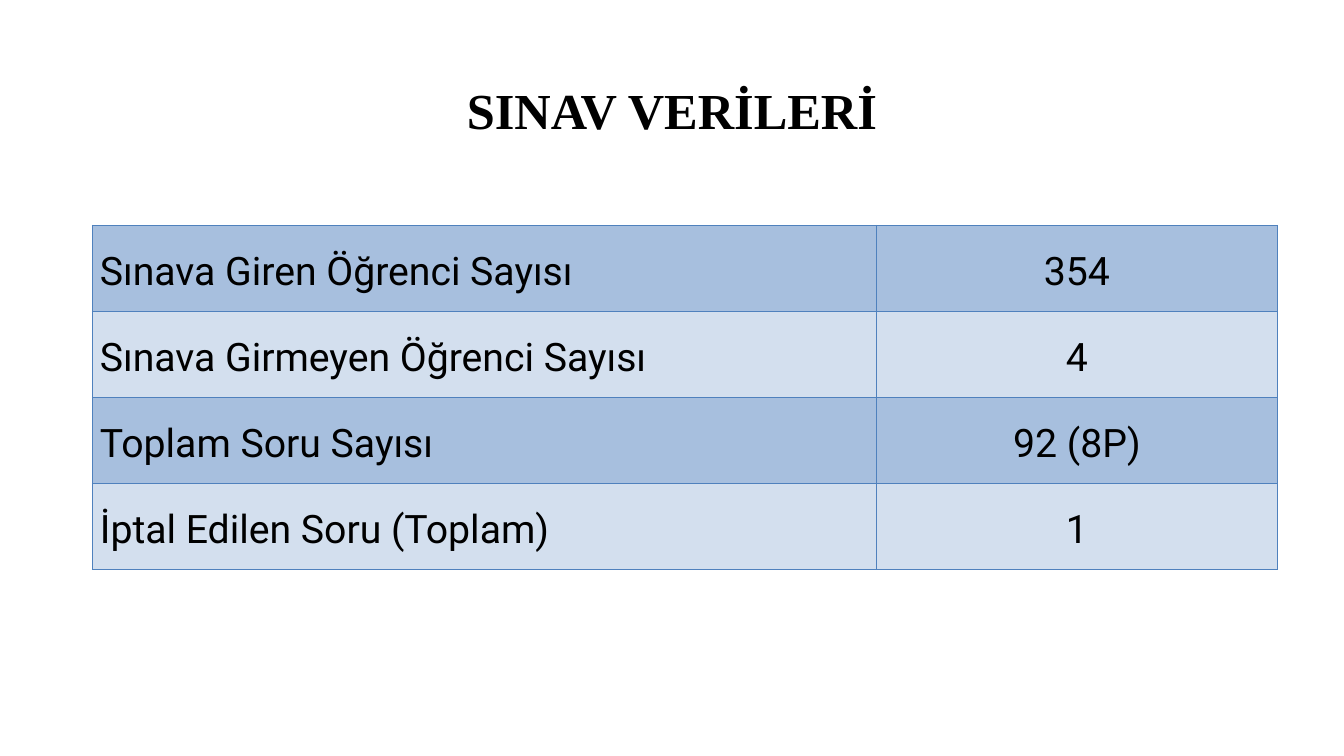
from dataclasses import dataclass

from lxml import etree
from pptx import Presentation
from pptx.dml.color import RGBColor
from pptx.enum import text
from pptx.oxml import ns
from pptx.util import Pt


@dataclass(frozen=True)
class Theme:
    ink: str = "000000"
    border: str = "4F81BD"
    bands: tuple = ("A7BFDE", "D3DFEE")
    title_font: str = "Times New Roman"
    body_font: str = "Roboto"
    title_size: int = 36
    body_size: int = 28


THEME = Theme()
EXAM_DATA = [
    ("Sınava Giren Öğrenci Sayısı", "354"),
    ("Sınava Girmeyen Öğrenci Sayısı", "4"),
    ("Toplam Soru Sayısı", "92 (8P)"),
    ("İptal Edilen Soru (Toplam)", "1"),
]
COLUMN_WIDTHS = (560, 286.5)
COLUMN_ALIGNMENTS = (text.PP_ALIGN.LEFT, text.PP_ALIGN.CENTER)
ROW_HEIGHT = 61.4


def style_paragraph(paragraph, font_name, size, alignment, line_spacing, bold=False):
    paragraph.alignment = alignment
    paragraph.line_spacing = line_spacing
    paragraph.space_before = paragraph.space_after = Pt(0)
    font = paragraph.font
    font.name = font_name
    font.size = Pt(size)
    font.bold = bold
    font.color.rgb = RGBColor.from_string(THEME.ink)


def set_title(slide, wording):
    title = slide.shapes.title
    title.left, title.top = Pt(66), Pt(28.75)
    title.width, title.height = Pt(828), Pt(104.4)
    frame = title.text_frame
    frame.text = wording
    frame.word_wrap = True
    frame.vertical_anchor = text.MSO_ANCHOR.MIDDLE
    style_paragraph(frame.paragraphs[0], THEME.title_font, THEME.title_size,
                    text.PP_ALIGN.CENTER, 0.9, bold=True)


def add_borders(cell):
    properties = cell._tc.get_or_add_tcPr()
    for position, side in enumerate(("lnL", "lnR", "lnT", "lnB")):
        line = etree.Element(ns.qn(f"a:{side}"), w=str(Pt(1)))
        fill = etree.SubElement(line, ns.qn("a:solidFill"))
        etree.SubElement(fill, ns.qn("a:srgbClr"), val=THEME.border)
        properties.insert(position, line)


def fill_cell(cell, wording, alignment, color):
    cell.text = wording
    cell.vertical_anchor = text.MSO_ANCHOR.MIDDLE
    cell.margin_left = cell.margin_right = Pt(5.4)
    cell.margin_top = cell.margin_bottom = Pt(0)
    cell.fill.solid()
    cell.fill.fore_color.rgb = RGBColor.from_string(color)
    style_paragraph(cell.text_frame.paragraphs[0], THEME.body_font,
                    THEME.body_size, alignment, 1.15)
    add_borders(cell)


def add_data_table(slide, records):
    table = slide.shapes.add_table(
        len(records), len(COLUMN_WIDTHS), Pt(66), Pt(161),
        Pt(sum(COLUMN_WIDTHS)), Pt(ROW_HEIGHT * len(records))).table
    table.first_row = table.horz_banding = False
    for column, width in zip(table.columns, COLUMN_WIDTHS):
        column.width = Pt(width)
    for index, (row, record) in enumerate(zip(table.rows, records)):
        row.height = Pt(ROW_HEIGHT)
        color = THEME.bands[index % len(THEME.bands)]
        for cell, wording, alignment in zip(row.cells, record, COLUMN_ALIGNMENTS):
            fill_cell(cell, wording, alignment, color)


def main():
    presentation = Presentation()
    presentation.slide_width, presentation.slide_height = Pt(960), Pt(540)
    slide = presentation.slides.add_slide(presentation.slide_layouts[5])
    set_title(slide, "SINAV VERİLERİ")
    add_data_table(slide, EXAM_DATA)
    presentation.save("out.pptx")


if __name__ == "__main__":
    main()
